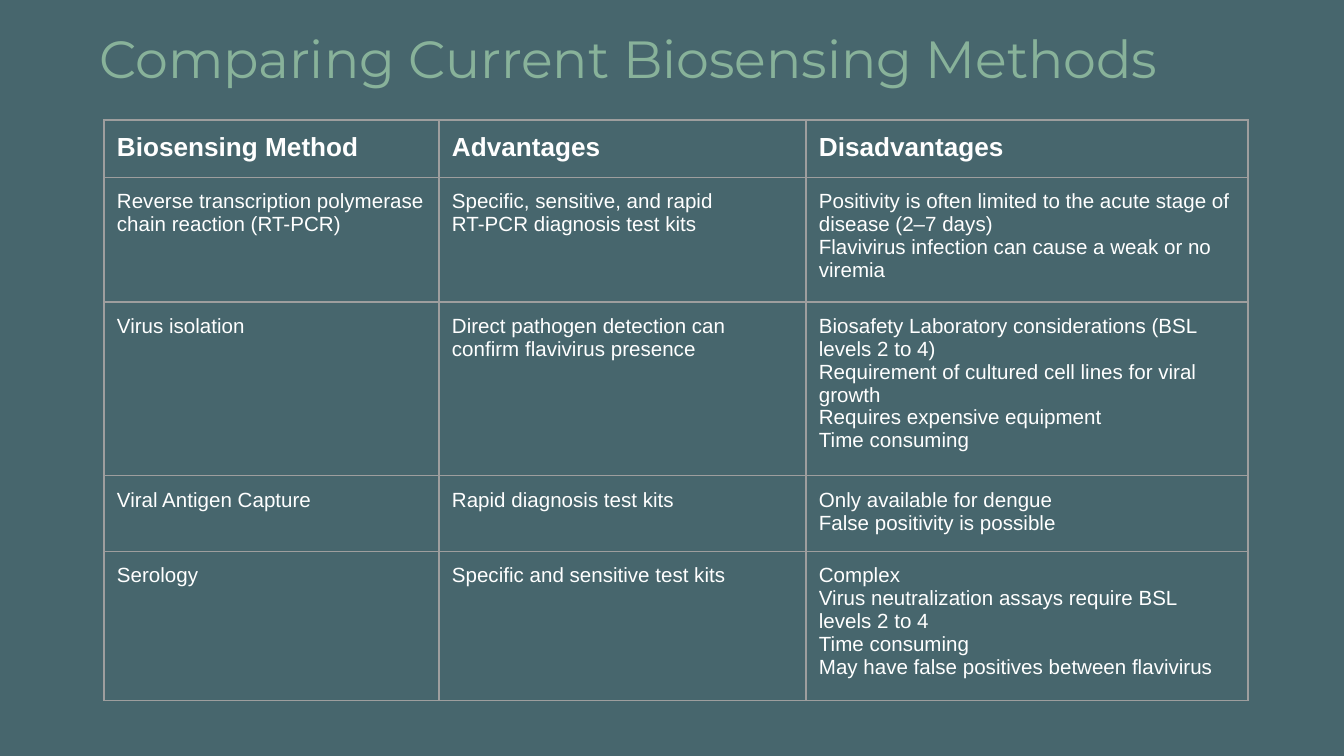
from lxml import etree
from pptx import Presentation
from pptx.dml.color import RGBColor as RGB
from pptx.enum.text import MSO_ANCHOR as Anchor
from pptx.oxml.ns import qn
from pptx.util import Pt

PX = 914400 / 134.4  # EMU in one px
COLORS = {"back": "47666D", "title": "88B29A", "text": "FFFFFF", "border": "9E9E9E"}
INSET = 13

TITLE = "Comparing Current Biosensing Methods"
COL_WIDTHS = [335, 367, 442]
ROW_HEIGHTS = [44, 91, 126, 55, 109]  # minimum heights; rows grow with their text
ROWS = [
    ["Biosensing Method", "Advantages", "Disadvantages"],
    ["Reverse transcription polymerase chain reaction (RT-PCR)",
     "Specific, sensitive, and rapid\nRT-PCR diagnosis test kits",
     "Positivity is often limited to the acute stage of disease (2–7 days)\n"
     "Flavivirus infection can cause a weak or no viremia"],
    ["Virus isolation",
     "Direct pathogen detection can confirm flavivirus presence",
     "Biosafety Laboratory considerations (BSL levels 2 to 4)\n"
     "Requirement of cultured cell lines for viral growth\n"
     "Requires expensive equipment\nTime consuming"],
    ["Viral Antigen Capture", "Rapid diagnosis test kits",
     "Only available for dengue\nFalse positivity is possible"],
    ["Serology", "Specific and sensitive test kits",
     "Complex\nVirus neutralization assays require BSL levels 2 to 4\n"
     "Time consuming\nMay have false positives between flavivirus"],
]


def px(n):
    return round(n * PX)


def color(name):
    return RGB.from_string(COLORS[name])


def format_text(tf, font, size, color_name, bold=False):
    for p in tf.paragraphs:
        for r in p.runs:
            r.font.name, r.font.size, r.font.bold = font, Pt(size), bold
            r.font.color.rgb = color(color_name)


def set_insets(box):
    box.margin_left = box.margin_right = px(INSET)
    box.margin_top = box.margin_bottom = px(INSET)


def add_borders(cell):
    """Draw all four edges; they must come before the fill in tcPr."""
    tc_pr = cell._tc.get_or_add_tcPr()
    for i, edge in enumerate(("lnL", "lnR", "lnT", "lnB")):
        ln = etree.Element(qn(f"a:{edge}"), w=str(Pt(0.75)))
        fill = etree.SubElement(ln, qn("a:solidFill"))
        etree.SubElement(fill, qn("a:srgbClr"), val=COLORS["border"])
        tc_pr.insert(i, ln)


def add_title(s, x, y, w, h):
    tf = s.shapes.add_textbox(px(x), px(y), px(w), px(h)).text_frame
    tf.word_wrap = True
    tf.vertical_anchor = Anchor.TOP
    set_insets(tf)
    tf.text = TITLE
    format_text(tf, "Montserrat", 28, "title")


def add_methods_table(s, x, y):
    frame = s.shapes.add_table(len(ROWS), len(COL_WIDTHS), px(x), px(y),
                               px(sum(COL_WIDTHS)), px(sum(ROW_HEIGHTS)))
    table = frame.table
    table.horz_banding = False
    for col, w in zip(table.columns, COL_WIDTHS):
        col.width = px(w)
    for i, (row, h) in enumerate(zip(table.rows, ROW_HEIGHTS)):
        row.height = px(h)
        header = i == 0
        for cell, text in zip(row.cells, ROWS[i]):
            cell.fill.background()
            add_borders(cell)
            set_insets(cell)
            cell.vertical_anchor = Anchor.TOP
            cell.text_frame.text = text
            format_text(cell.text_frame, "Arial", 14 if header else 11, "text", header)


def main():
    prs = Presentation()
    prs.slide_width, prs.slide_height = px(1344), px(756)
    s = prs.slides.add_slide(prs.slide_layouts[6])
    s.background.fill.solid()
    s.background.fill.fore_color.rgb = color("back")
    add_title(s, 86, 13, 1172, 85)
    add_methods_table(s, 104, 120)
    prs.save("out.pptx")


if __name__ == "__main__":
    main()
